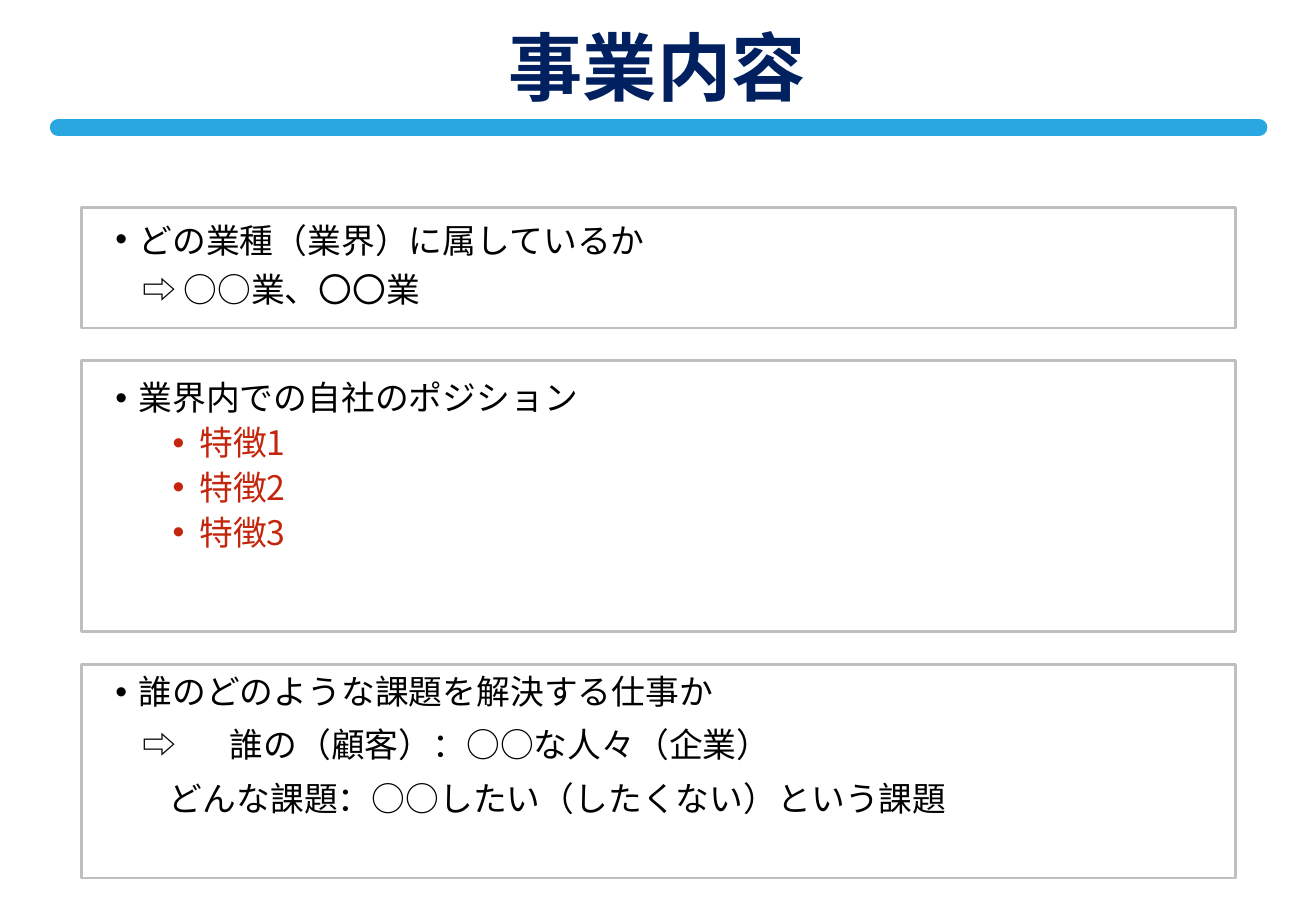
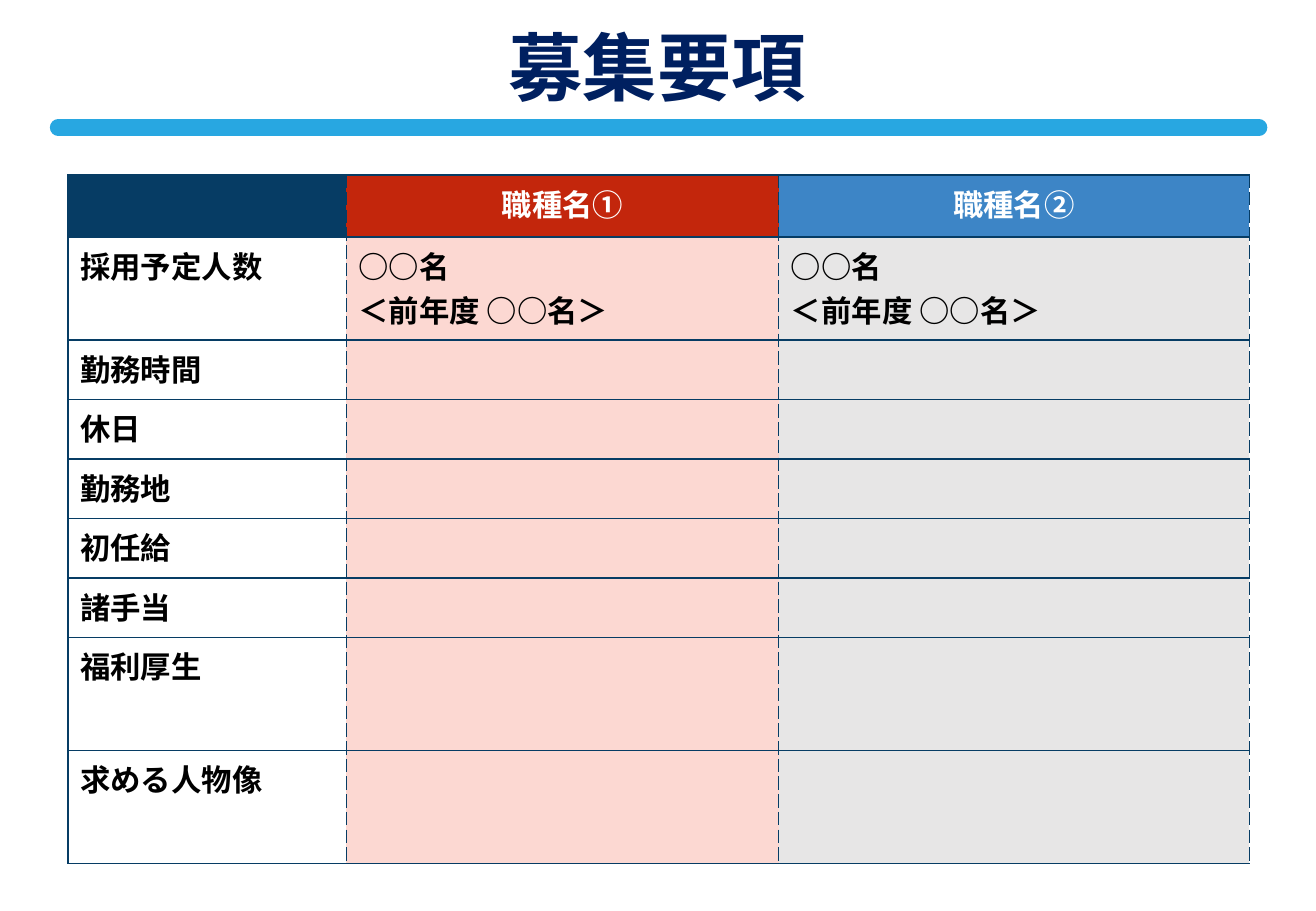
from lxml.etree import SubElement
from pptx import Presentation
from pptx.dml.color import RGBColor
from pptx.enum.shapes import MSO_CONNECTOR, MSO_SHAPE
from pptx.enum.text import MSO_ANCHOR, PP_ALIGN
from pptx.oxml.ns import qn
from pptx.util import Inches, Pt

FONT = "Noto Sans CJK JP"
BLACK = RGBColor(0x00, 0x00, 0x00)
WHITE = RGBColor(0xFF, 0xFF, 0xFF)
TITLE_NAVY = RGBColor(0x00, 0x20, 0x60)
RULE_BLUE = RGBColor(0x28, 0xA7, 0xE1)
BOX_GREY = RGBColor(0xBF, 0xBF, 0xBF)
TABLE_NAVY = RGBColor(0x06, 0x3C, 0x64)
RED = RGBColor(0xC3, 0x26, 0x0C)
BLUE = RGBColor(0x3D, 0x85, 0xC6)
PINK = RGBColor(0xFC, 0xD8, 0xD2)
PALE_GREY = RGBColor(0xE7, 0xE6, 0xE6)

HEADER_FILLS = (TABLE_NAVY, RED, BLUE)
BODY_FILLS = (WHITE, PINK, PALE_GREY)


class Deck:
    def __init__(self):
        self.presentation = Presentation()
        self.presentation.slide_width = Inches(10.83)
        self.presentation.slide_height = Inches(7.5)
        self.slide = None

    def add_slide(self, title):
        layout = self.presentation.slide_layouts[6]
        self.slide = self.presentation.slides.add_slide(layout)
        self.add_title_rule()
        shape = self.slide.shapes.add_textbox(
            Inches(0.74), Inches(0.39), Inches(9.34), Inches(0.4))
        frame = shape.text_frame
        frame.word_wrap = True
        frame.vertical_anchor = MSO_ANCHOR.MIDDLE
        paragraph = frame.paragraphs[0]
        paragraph.text = title
        paragraph.alignment = PP_ALIGN.CENTER
        paragraph.line_spacing = 0.9
        self.style(paragraph, 44, TITLE_NAVY, bold=True)

    def add_title_rule(self):
        rule = self.slide.shapes.add_connector(
            MSO_CONNECTOR.STRAIGHT, Inches(0.48), Inches(1.05), Inches(10.36), Inches(1.05))
        rule.line.color.rgb = RULE_BLUE
        rule.line.width = Pt(10)
        rule.line._get_or_add_ln().set("cap", "rnd")
        SubElement(rule._element.spPr, qn("a:effectLst"))

    def style(self, paragraph, size, color, bold=False):
        """Set the font for both Latin and East Asian text."""
        font = paragraph.font
        font.size = Pt(size)
        font.bold = bold
        font.color.rgb = color
        font.name = FONT
        SubElement(font._element, qn("a:ea"), typeface=FONT)

    def add_box(self, top, height, inset, line_spacing, items):
        """Add an outlined box; items are (text, left, indent, space before, bullet, colour)."""
        box = self.slide.shapes.add_shape(
            MSO_SHAPE.RECTANGLE, Inches(0.67), Inches(top), Inches(9.5), Inches(height))
        box.shadow.inherit = False
        box.fill.background()
        box.line.color.rgb = BOX_GREY
        box.line.width = Pt(1.5)
        frame = box.text_frame
        frame.word_wrap = True
        frame.vertical_anchor = MSO_ANCHOR.TOP
        frame.margin_left = frame.margin_right = Inches(0.22)
        frame.margin_top = frame.margin_bottom = Inches(inset)
        for index, (text, left, indent, before, bullet, color) in enumerate(items):
            paragraph = frame.add_paragraph() if index else frame.paragraphs[0]
            paragraph.text = text
            paragraph.alignment = PP_ALIGN.LEFT
            paragraph.line_spacing = line_spacing
            paragraph.space_before = Pt(before)
            self.indent(paragraph, left, indent, bullet, color)
            self.style(paragraph, 20, color)

    def indent(self, paragraph, left, indent, bullet, color):
        properties = paragraph._p.get_or_add_pPr()
        properties.set("marL", str(Inches(left)))
        properties.set("indent", str(Inches(indent)))
        if bullet:
            bullet_color = SubElement(properties, qn("a:buClr"))
            SubElement(bullet_color, qn("a:srgbClr"), val=str(color))
            SubElement(properties, qn("a:buFont"), typeface="Arial")
            SubElement(properties, qn("a:buChar"), char="•")
        else:
            SubElement(properties, qn("a:buNone"))

    def add_table(self, widths, heights, rows):
        table = self.slide.shapes.add_table(
            len(heights), len(widths), Inches(0.56), Inches(1.44),
            Inches(sum(widths)), Inches(sum(heights))).table
        table.first_row = table.horz_banding = False
        for column, width in zip(table.columns, widths):
            column.width = Inches(width)
        for row, height in zip(table.rows, heights):
            row.height = Inches(height)
        for row_index, texts in enumerate(rows):
            header = row_index == 0
            fills = HEADER_FILLS if header else BODY_FILLS
            for column_index, (text, fill) in enumerate(zip(texts, fills)):
                cell = table.cell(row_index, column_index)
                self.add_borders(cell, solid_left=column_index == 0)
                cell.fill.solid()
                cell.fill.fore_color.rgb = fill
                if text:
                    self.fill_cell(cell, text, header)

    def fill_cell(self, cell, text, header):
        cell.text = text
        for paragraph in cell.text_frame.paragraphs:
            paragraph.alignment = PP_ALIGN.CENTER if header else PP_ALIGN.LEFT
            self.style(paragraph, 18, WHITE if header else BLACK, bold=True)

    def add_borders(self, cell, solid_left):
        properties = cell._tc.get_or_add_tcPr()
        for side in "LRTB":
            dashed = side == "R" or (side == "L" and not solid_left)
            line = SubElement(properties, qn(f"a:ln{side}"), w=str(Pt(0.75 if dashed else 1)))
            fill = SubElement(line, qn("a:solidFill"))
            SubElement(fill, qn("a:srgbClr"), val=str(TABLE_NAVY))
            SubElement(line, qn("a:prstDash"), val="dash" if dashed else "solid")


def heading(text):
    return (text, 0.25, -0.19, 0, True, BLACK)


def feature(number):
    return (f"特徴{number}", 0.75, -0.22, 5, True, RED)


def answer(text, left, indent=0):
    return (text, left, indent, 10, False, BLACK)


def main():
    deck = Deck()

    deck.add_slide("事業内容")
    deck.add_box(1.71, 0.99, 0.16, 0.8, [
        heading("どの業種（業界）に属しているか"),
        answer("⇨ ○○業、〇〇業", 0.28),
    ])
    deck.add_box(2.97, 2.23, 0.17, 0.9, [
        heading("業界内での自社のポジション"),
        *[feature(number) for number in (1, 2, 3)],
    ])
    deck.add_box(5.47, 1.76, 0.09, 0.9, [
        heading("誰のどのような課題を解決する仕事か"),
        answer("⇨\t誰の（顧客）：○○な人々（企業）", 1, -0.72),
        answer("どんな課題：○○したい（したくない）という課題", 0.5),
    ])

    deck.add_slide("募集要項")
    planned = "○○名\n＜前年度 ○○名＞"
    topics = ("勤務時間", "休日", "勤務地", "初任給", "諸手当", "福利厚生", "求める人物像")
    deck.add_table(
        widths=[2.29, 3.56, 3.87],
        heights=[0.51, 0.85] + [0.49] * 5 + [0.93] * 2,
        rows=[("", "職種名①", "職種名②"), ("採用予定人数", planned, planned)]
        + [(topic, "", "") for topic in topics])

    deck.presentation.save("out.pptx")


if __name__ == "__main__":
    main()
